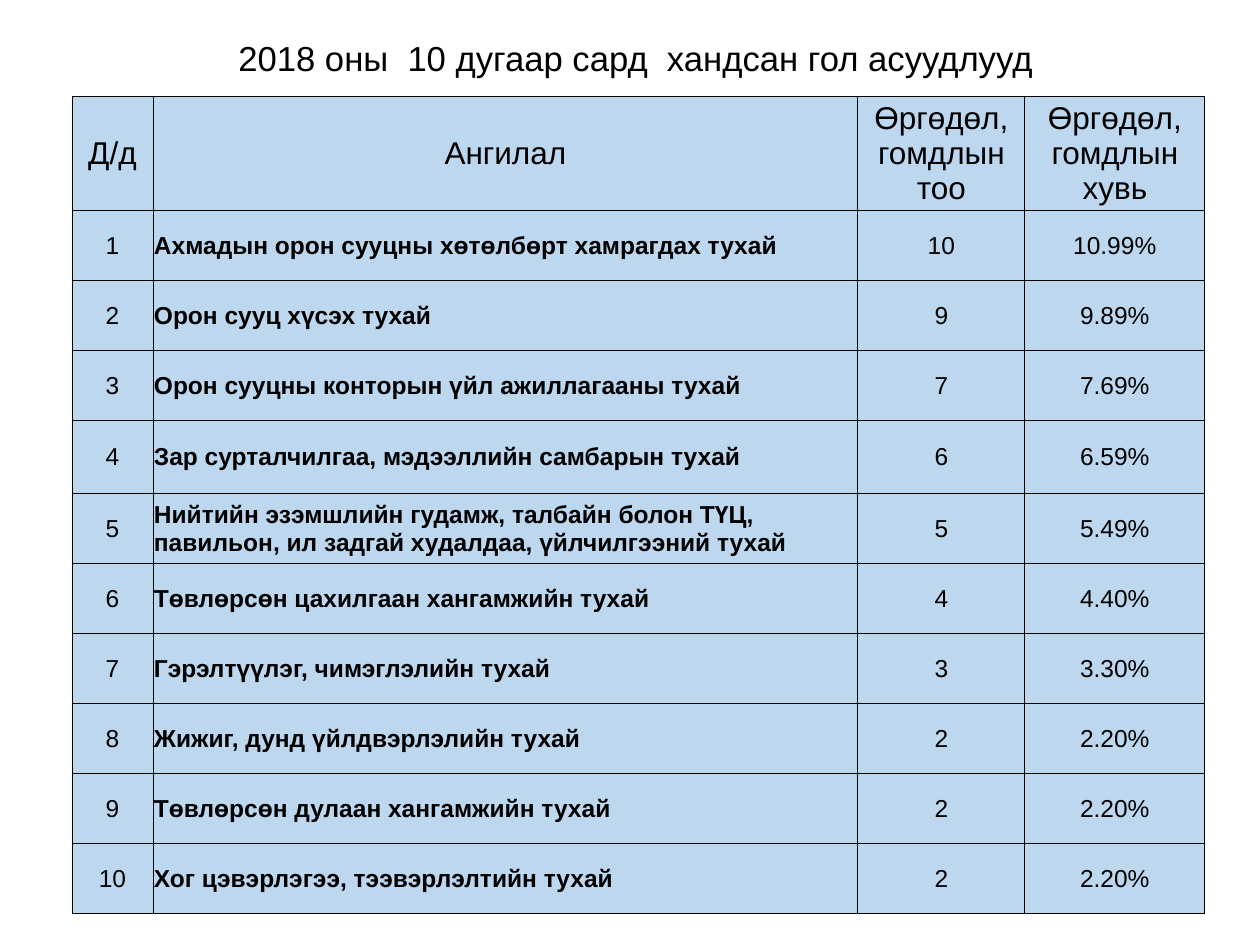
from lxml import etree
from pptx import Presentation
from pptx import util as u
from pptx.dml import color
from pptx.enum import text as t
from pptx.oxml import ns

SCALE = 914400 // 126
HEADS = ["Д/д", "Ангилал", "Өргөдөл, гомдлын тоо", "Өргөдөл, гомдлын хувь"]
TOPICS = [
    ("Ахмадын орон сууцны хөтөлбөрт хамрагдах тухай", "10", "10.99%"),
    ("Орон сууц хүсэх тухай", "9", "9.89%"),
    ("Орон сууцны конторын үйл ажиллагааны тухай", "7", "7.69%"),
    ("Зар сурталчилгаа, мэдээллийн самбарын тухай", "6", "6.59%"),
    ("Нийтийн эзэмшлийн гудамж, талбайн болон ТҮЦ, "
     "павильон, ил задгай худалдаа, үйлчилгээний тухай", "5", "5.49%"),
    ("Төвлөрсөн цахилгаан хангамжийн тухай", "4", "4.40%"),
    ("Гэрэлтүүлэг, чимэглэлийн тухай", "3", "3.30%"),
    ("Жижиг, дунд үйлдвэрлэлийн тухай", "2", "2.20%"),
    ("Төвлөрсөн дулаан хангамжийн тухай", "2", "2.20%"),
    ("Хог цэвэрлэгээ, тээвэрлэлтийн тухай", "2", "2.20%"),
]
WIDTHS = [81, 705, 167, 180]
HEIGHTS = [86] + [70] * 3 + [73] + [70] * 6


def px(n):
    """Turn whole pixels into EMU."""
    return u.Emu(n * SCALE)


def rgb(code):
    """Turn a hex string into a colour."""
    return color.RGBColor.from_string(code)


def write(frame, words, size=14, bold=False, align=t.PP_ALIGN.CENTER):
    """Put one formatted paragraph into a text frame."""
    para = frame.paragraphs[0]
    para.alignment = align
    run = para.add_run()
    run.text = words
    font = run.font
    font.name, font.size, font.bold = "Arial", u.Pt(size), bold
    font.color.rgb = rgb("000000")


def add_title(slide, words):
    """Add the heading above the table."""
    frame = slide.shapes.add_textbox(px(102), px(20), px(1067), px(82)).text_frame
    frame.word_wrap = True
    frame.vertical_anchor = t.MSO_ANCHOR.MIDDLE
    frame.margin_top, frame.margin_bottom = px(6), px(12)
    write(frame, words, size=19.8)


def edge(cell):
    """Draw thin black borders round a cell."""
    props = cell._tc.get_or_add_tcPr()
    for spot, side in enumerate(("lnL", "lnR", "lnT", "lnB")):
        line = etree.Element(ns.qn("a:" + side), w=str(u.Pt(0.5)))
        fill = etree.SubElement(line, ns.qn("a:solidFill"))
        etree.SubElement(fill, ns.qn("a:srgbClr"), val="000000")
        props.insert(spot, line)


def fill_cell(cell, words, **style):
    """Fill, border and write one cell."""
    cell.fill.solid()
    cell.fill.fore_color.rgb = rgb("BDD7EE")
    cell.vertical_anchor = t.MSO_ANCHOR.MIDDLE
    cell.margin_left = cell.margin_right = cell.margin_top = px(1)
    cell.margin_bottom = 0
    write(cell.text_frame, words, **style)
    edge(cell)


def add_grid(slide):
    """Add the table of topics with counts and shares."""
    rows = [HEADS] + [(str(n), *row) for n, row in enumerate(TOPICS, 1)]
    grid = slide.shapes.add_table(
        len(rows), len(HEADS), px(72), px(96),
        px(sum(WIDTHS)), px(sum(HEIGHTS))).table
    for col, width in zip(grid.columns, WIDTHS):
        col.width = px(width)
    for row, height in zip(grid.rows, HEIGHTS):
        row.height = px(height)
    topic = {"bold": True, "align": t.PP_ALIGN.LEFT}
    for r, row in enumerate(rows):
        for c, words in enumerate(row):
            style = {"size": 18} if r == 0 else topic if c == 1 else {}
            fill_cell(grid.cell(r, c), words, **style)


def main():
    """Build and save the slide."""
    deck = Presentation()
    deck.slide_width, deck.slide_height = px(1260), px(945)
    slide = deck.slides.add_slide(deck.slide_layouts[6])
    add_title(slide, "2018 оны  10 дугаар сард  хандсан гол асуудлууд")
    add_grid(slide)
    deck.save("out.pptx")


if __name__ == "__main__":
    main()
